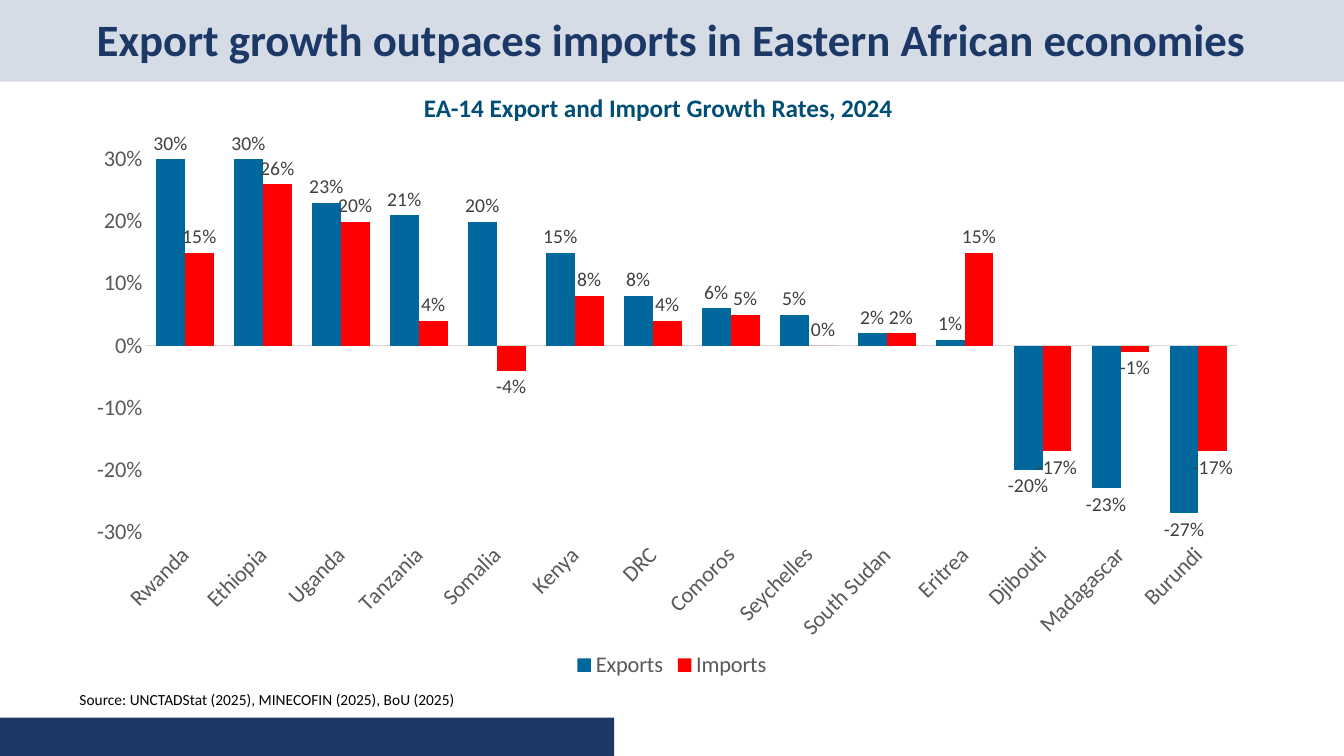
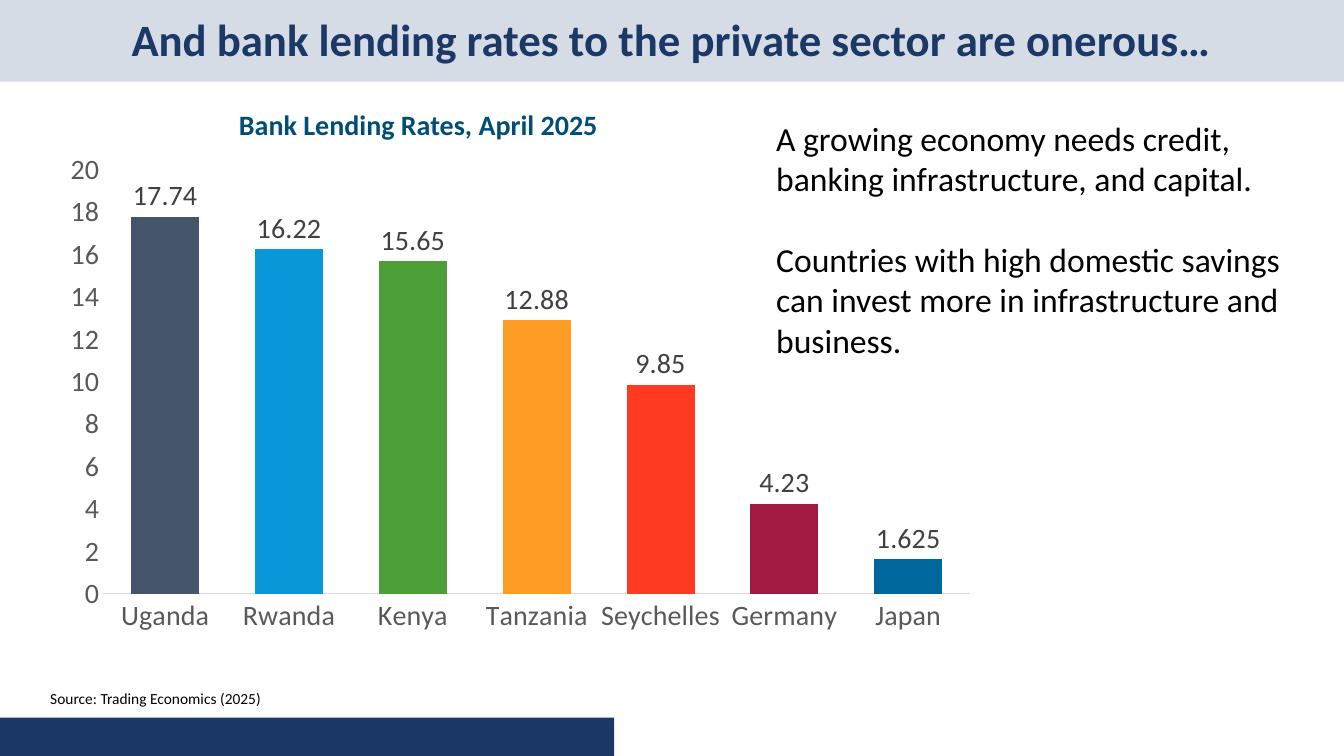
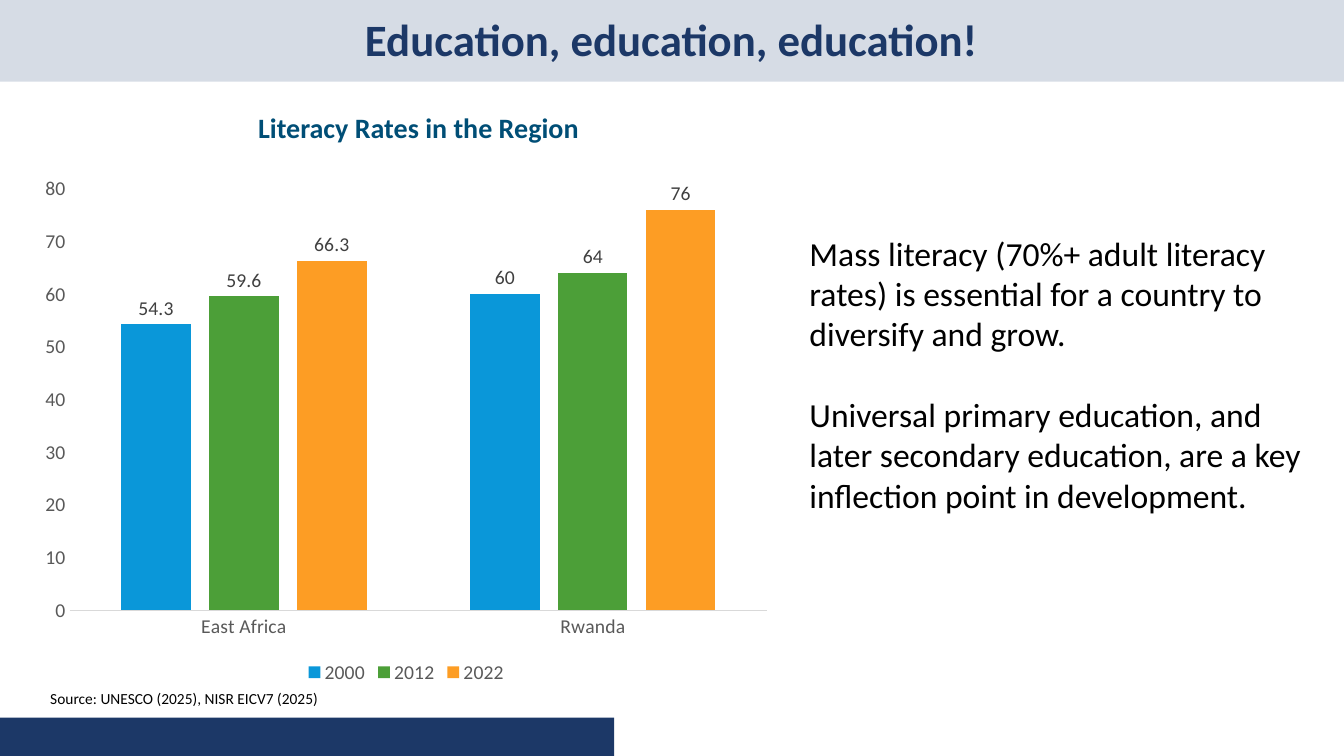
from dataclasses import dataclass

from lxml import etree
from pptx import Presentation
from pptx.chart.data import CategoryChartData
from pptx.dml.color import RGBColor
from pptx.enum.chart import (XL_CHART_TYPE, XL_LABEL_POSITION, XL_LEGEND_POSITION,
                             XL_TICK_LABEL_POSITION, XL_TICK_MARK)
from pptx.enum.shapes import MSO_SHAPE
from pptx.enum.text import MSO_ANCHOR, PP_ALIGN
from pptx.oxml.ns import qn
from pptx.util import Inches, Pt

COLUMN = XL_CHART_TYPE.COLUMN_CLUSTERED
OUTSIDE_END = XL_LABEL_POSITION.OUTSIDE_END
LEGEND_BOTTOM = XL_LEGEND_POSITION.BOTTOM
LABELS_LOW = XL_TICK_LABEL_POSITION.LOW
NO_TICK = XL_TICK_MARK.NONE
RECTANGLE = MSO_SHAPE.RECTANGLE
TOP, MIDDLE = MSO_ANCHOR.TOP, MSO_ANCHOR.MIDDLE
LEFT, CENTER = PP_ALIGN.LEFT, PP_ALIGN.CENTER


@dataclass(frozen=True)
class Theme:
    font: str = "Calibri"
    navy: str = "1C3867"
    title_band: str = "D6DCE5"
    heading: str = "004E76"
    text: str = "000000"
    axis_text: str = "595959"
    axis_line: str = "D9D9D9"
    label_text: str = "404040"
    slate: str = "44546A"
    sky: str = "0A97D9"
    green: str = "4C9F38"
    orange: str = "FD9D24"
    coral: str = "FF3A21"
    wine: str = "A21942"
    ocean: str = "00689D"
    red: str = "FF0000"
    title_size: int = 32
    body_size: int = 24
    heading_size: int = 20
    source_size: int = 11


THEME = Theme()


@dataclass(frozen=True)
class ChartStyle:
    axis_range: tuple  # minimum, maximum, step
    text_size: int
    label_size: int
    gap: int
    overlap: int = 0
    number_format: str = "General"
    legend: bool = False
    low_slanted_labels: bool = False
    plot_box: tuple = ()  # x, y, width, height as shares of the chart


def rgb(color):
    return RGBColor.from_string(color)


def style_font(font, size, color, bold=False):
    font.name = THEME.font
    font.size = Pt(size)
    font.bold = bold
    font.color.rgb = rgb(color)


def add_band(slide, box, color):
    band = slide.shapes.add_shape(RECTANGLE, *map(Inches, box))
    band.shadow.inherit = False
    band.fill.solid()
    band.fill.fore_color.rgb = rgb(color)
    band.line.fill.background()


def add_text(slide, box, paragraphs, size, color=THEME.text, bold=False,
             align=LEFT, anchor=TOP, line_spacing=1.0):
    frame = slide.shapes.add_textbox(*map(Inches, box)).text_frame
    frame.word_wrap = True
    frame.vertical_anchor = anchor
    for index, text in enumerate(paragraphs):
        paragraph = frame.paragraphs[0] if index == 0 else frame.add_paragraph()
        paragraph.alignment = align
        paragraph.line_spacing = line_spacing
        if index:
            paragraph.space_before = Pt(size * 1.2)
        run = paragraph.add_run()
        run.text = text
        style_font(run.font, size, color, bold)


def add_frame(presentation, title):
    """Add a blank slide with the title band, title and footer band."""
    slide = presentation.slides.add_slide(presentation.slide_layouts[6])
    add_band(slide, (0, 0, 13.33, 0.81), THEME.title_band)
    add_band(slide, (0, 7.12, 6.09, 0.38), THEME.navy)
    add_text(slide, (0.4, 0.1, 12.52, 0.64), [title], THEME.title_size, THEME.navy,
             bold=True, align=CENTER, anchor=MIDDLE, line_spacing=0.9)
    return slide


def add_heading(slide, box, text, size=THEME.heading_size):
    add_text(slide, box, [text], size, THEME.heading, bold=True, align=CENTER)


def add_source(slide, text, left=0.4, top=6.79):
    add_text(slide, (left, top, 5.3, 0.29), [f"Source: {text}"], THEME.source_size)


def set_plot_box(chart, plot_box):
    plot_area = chart.plots[0]._element.getparent()
    for old_layout in plot_area.findall(qn("c:layout")):
        plot_area.remove(old_layout)
    layout = etree.Element(qn("c:layout"))
    manual = etree.SubElement(layout, qn("c:manualLayout"))
    settings = [("layoutTarget", "inner"), ("xMode", "edge"), ("yMode", "edge"),
                *zip("xywh", plot_box)]
    for name, value in settings:
        etree.SubElement(manual, qn(f"c:{name}")).set("val", str(value))
    plot_area.insert(0, layout)


def style_axes(chart, style):
    category_axis, value_axis = chart.category_axis, chart.value_axis
    for axis in (category_axis, value_axis):
        axis.major_tick_mark = axis.minor_tick_mark = NO_TICK
        axis.has_major_gridlines = False
        style_font(axis.tick_labels.font, style.text_size, THEME.axis_text)
    category_axis.format.line.color.rgb = rgb(THEME.axis_line)
    category_axis.format.line.width = Pt(0.75)
    if style.low_slanted_labels:
        category_axis.tick_label_position = LABELS_LOW
        text_body = category_axis._element.find(qn("c:txPr")).find(qn("a:bodyPr"))
        text_body.set("rot", "-2700000")
    value_axis.format.line.fill.background()
    (value_axis.minimum_scale, value_axis.maximum_scale,
     value_axis.major_unit) = style.axis_range
    value_axis.tick_labels.number_format = style.number_format
    value_axis.tick_labels.number_format_is_linked = False


def add_column_chart(slide, box, categories, series_rows, style, point_colors=()):
    """Each series row holds a name, a colour and the values."""
    data = CategoryChartData(number_format=style.number_format)
    data.categories = categories
    for name, _, values in series_rows:
        data.add_series(name, values)
    chart = slide.shapes.add_chart(COLUMN, *map(Inches, box), data).chart
    chart.has_title = False
    style_font(chart.font, style.text_size, THEME.text)
    style_axes(chart, style)

    # Legend
    chart.has_legend = style.legend
    if style.legend:
        chart.legend.position = LEGEND_BOTTOM
        chart.legend.include_in_layout = False
        style_font(chart.legend.font, style.text_size, THEME.axis_text)

    # Columns and their labels
    plot = chart.plots[0]
    plot.vary_by_categories = False
    plot.gap_width = style.gap
    plot.overlap = style.overlap
    for series, (_, color, _) in zip(plot.series, series_rows):
        series.invert_if_negative = False
        series.format.fill.solid()
        series.format.fill.fore_color.rgb = rgb(color)
    for index, color in enumerate(point_colors):
        fill = plot.series[0].points[index].format.fill
        fill.solid()
        fill.fore_color.rgb = rgb(color)
    plot.has_data_labels = True
    labels = plot.data_labels
    labels.show_value = True
    labels.position = OUTSIDE_END
    labels.number_format = style.number_format
    labels.number_format_is_linked = False
    style_font(labels.font, style.label_size, THEME.label_text)

    if style.plot_box:
        set_plot_box(chart, style.plot_box)


def build_trade_slide(presentation):
    slide = add_frame(presentation, "Export growth outpaces imports in Eastern African economies")
    add_heading(slide, (1.06, 0.87, 10.94, 0.4),
                "EA-14 Export and Import Growth Rates, 2024", size=18)
    countries = ["Rwanda", "Ethiopia", "Uganda", "Tanzania", "Somalia", "Kenya", "DRC",
                 "Comoros", "Seychelles", "South Sudan", "Eritrea", "Djibouti",
                 "Madagascar", "Burundi"]
    exports = [0.3, 0.3, 0.23, 0.21, 0.2, 0.15, 0.08, 0.06, 0.05, 0.02, 0.01,
               -0.2, -0.23, -0.27]
    imports = [0.15, 0.26, 0.2, 0.04, -0.04, 0.08, 0.04, 0.05, 0, 0.02, 0.15,
               -0.17, -0.01, -0.17]
    style = ChartStyle((-0.3, 0.3, 0.1), text_size=16, label_size=14, gap=70,
                       number_format="0%", legend=True, low_slanted_labels=True,
                       plot_box=(0.062, 0.055, 0.909, 0.672))
    add_column_chart(slide, (0.71, 1.28, 11.91, 5.5), countries,
                     [("Exports", THEME.ocean, exports), ("Imports", THEME.red, imports)],
                     style)
    add_source(slide, "UNCTADStat (2025), MINECOFIN (2025), BoU (2025)", 0.69, 6.8)


def build_lending_slide(presentation):
    slide = add_frame(presentation, "And bank lending rates to the private sector are onerous…")
    countries = ["Uganda", "Rwanda", "Kenya", "Tanzania", "Seychelles", "Germany", "Japan"]
    rates = [17.74, 16.22, 15.65, 12.88, 9.85, 4.23, 1.625]
    colors = [THEME.slate, THEME.sky, THEME.green, THEME.orange, THEME.coral,
              THEME.wine, THEME.ocean]
    style = ChartStyle((0, 20, 2), text_size=20, label_size=20, gap=82, overlap=-27,
                       plot_box=(0.034, 0.055, 0.938, 0.806))
    add_column_chart(slide, (0.7, 1.39, 9.18, 5.23), countries,
                     [("Series 1", THEME.sky, rates)], style, colors)
    add_text(slide, (7.6, 1.12, 5.63, 2.52),
             ["A growing economy needs credit, banking infrastructure, and capital.",
              "Countries with high domestic savings can invest more in infrastructure "
              "and business."], THEME.body_size)
    add_heading(slide, (1.76, 1.02, 4.78, 0.45), "Bank Lending Rates, April 2025")
    add_source(slide, "Trading Economics (2025)")


def build_education_slide(presentation):
    slide = add_frame(presentation, "Education, education, education!")
    add_text(slide, (7.93, 2.26, 5.11, 3.33),
             ["Mass literacy (70%+ adult literacy rates) is essential for a country to "
              "diversify and grow.",
              "Universal primary education, and later secondary education, are a key "
              "inflection point in development."], THEME.body_size)
    style = ChartStyle((0, 80, 10), text_size=14, label_size=14, gap=150, overlap=-27,
                       legend=True)
    add_column_chart(slide, (0.3, 1.65, 7.46, 5.18), ["East Africa", "Rwanda"],
                     [("2000", THEME.sky, [54.3, 60]),
                      ("2012", THEME.green, [59.6, 64]),
                      ("2022", THEME.orange, [66.3, 76])], style)
    add_heading(slide, (1.76, 1.05, 4.78, 0.45), "Literacy Rates in the Region")
    add_source(slide, "UNESCO (2025), NISR EICV7 (2025)")


def main():
    presentation = Presentation()
    presentation.slide_width = Inches(13.33)
    presentation.slide_height = Inches(7.5)
    build_trade_slide(presentation)
    build_lending_slide(presentation)
    build_education_slide(presentation)
    presentation.save("out.pptx")


if __name__ == "__main__":
    main()
